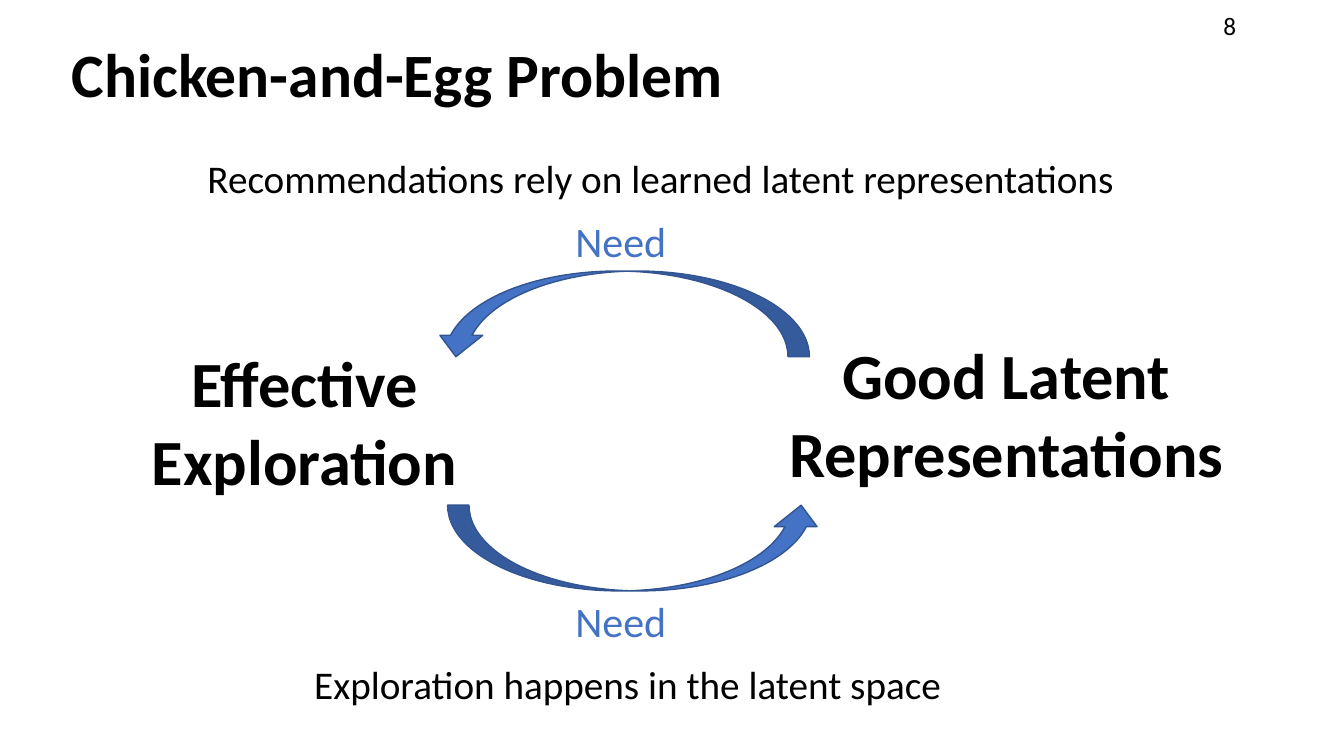
import dataclasses

import pptx
import pptx.dml.color
import pptx.enum.shapes
import pptx.enum.text
import pptx.util

Cm = pptx.util.Cm
RGBColor = pptx.dml.color.RGBColor
PP_ALIGN = pptx.enum.text.PP_ALIGN
MSO_AUTO_SIZE = pptx.enum.text.MSO_AUTO_SIZE


@dataclasses.dataclass(frozen=True)
class Theme:
    font: str = "Calibri"
    ink: RGBColor = RGBColor(0x00, 0x00, 0x00)
    accent: RGBColor = RGBColor(0x44, 0x72, 0xC4)
    arrow_edge: RGBColor = RGBColor(0x32, 0x54, 0x91)
    edge_width: int = 1
    title_size: int = 44
    concept_size: int = 46
    need_size: int = 30
    remark_size: int = 28
    number_size: int = 18


THEME = Theme()
TITLE_ONLY_LAYOUT = 5


def place(shape, left, top, width, height):
    shape.left, shape.top = Cm(left), Cm(top)
    shape.width, shape.height = Cm(width), Cm(height)


def write(frame, text, size, color=THEME.ink, bold=False, align=PP_ALIGN.LEFT):
    frame.text = text
    for paragraph in frame.paragraphs:
        paragraph.alignment = align
        paragraph.font.name = THEME.font
        paragraph.font.size = pptx.util.Pt(size)
        paragraph.font.bold = bold
        paragraph.font.color.rgb = color


def add_title(slide, text):
    title = slide.shapes.title
    place(title, 1.55, 0.58, 22.86, 2.74)
    frame = title.text_frame
    write(frame, text, THEME.title_size, bold=True)
    frame.auto_size = MSO_AUTO_SIZE.NONE
    frame.vertical_anchor = pptx.enum.text.MSO_ANCHOR.MIDDLE
    frame.paragraphs[0].line_spacing = 0.9


def add_label(slide, box, text, size, **style):
    label = slide.shapes.add_textbox(*map(Cm, box))
    frame = label.text_frame
    write(frame, text, size, **style)
    frame.word_wrap = False
    frame.auto_size = MSO_AUTO_SIZE.SHAPE_TO_FIT_TEXT


def add_concept(slide, box, text):
    add_label(slide, box, text, THEME.concept_size, bold=True, align=PP_ALIGN.CENTER)


def add_need(slide, arrow_left, arrow_top, label_top, rotation):
    arrow = slide.shapes.add_shape(
        pptx.enum.shapes.MSO_SHAPE.CURVED_DOWN_ARROW,
        Cm(arrow_left), Cm(arrow_top), Cm(9.45), Cm(2.16),
    )
    arrow.shadow.inherit = False
    arrow.rotation = rotation
    arrow.element.spPr.get_or_add_xfrm().set("flipH", "1")
    arrow.fill.solid()
    arrow.fill.fore_color.rgb = THEME.accent
    arrow.line.color.rgb = THEME.arrow_edge
    arrow.line.width = pptx.util.Pt(THEME.edge_width)
    add_label(slide, (14.25, label_top, 2.9, 1.55), "Need", THEME.need_size,
              color=THEME.accent)


def main():
    presentation = pptx.Presentation()
    presentation.slide_width, presentation.slide_height = Cm(33.87), Cm(19.05)
    slide = presentation.slides.add_slide(presentation.slide_layouts[TITLE_ONLY_LAYOUT])

    add_title(slide, "Chicken-and-Egg Problem")
    add_concept(slide, (3.28, 8.53, 8.79, 4.19), "Effective\nExploration")
    add_concept(slide, (19.3, 8.33, 12.12, 4.19), "Good Latent\nRepresentations")
    add_label(slide, (4.98, 3.76, 23.9, 1.45),
              "Recommendations rely on learned latent representations", THEME.remark_size)
    add_need(slide, 10.95, 6.83, 5.31, rotation=0)
    add_need(slide, 11.28, 12.73, 14.88, rotation=180)
    add_label(slide, (7.67, 16.51, 16.69, 1.45),
              "Exploration happens in the latent space", THEME.remark_size)

    page_number = slide.shapes.add_textbox(Cm(30.58), Cm(0.13), Cm(2.97), Cm(0.91))
    page_number.text_frame.word_wrap = True
    write(page_number.text_frame, "8", THEME.number_size)

    presentation.save("out.pptx")


if __name__ == "__main__":
    main()
